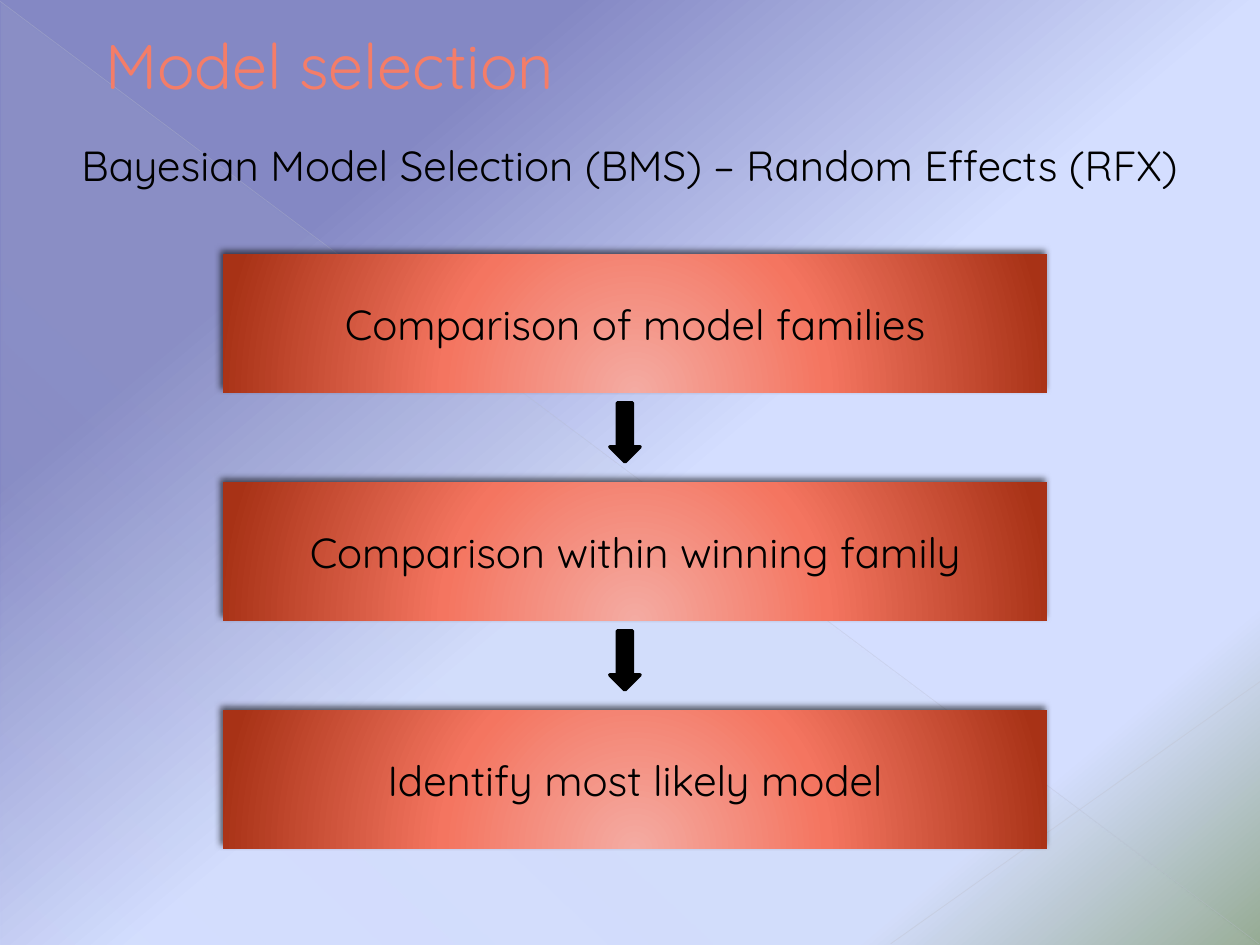
from lxml import etree
from pptx import Presentation
from pptx import util as u
from pptx.dml.color import RGBColor
from pptx.enum import shapes, text
from pptx.oxml.ns import qn

BLACK = RGBColor(0x00, 0x00, 0x00)
CORAL = RGBColor(0xF4, 0x7D, 0x68)
ROSE = RGBColor(0xF4, 0xAB, 0xA2)
RED = RGBColor(0xF4, 0x75, 0x60)
RUST = RGBColor(0xA8, 0x32, 0x16)
BLUE = RGBColor(0x84, 0x88, 0xC4)
SKY = RGBColor(0xD4, 0xDE, 0xFF)
SAGE = RGBColor(0x96, 0xAB, 0x94)
MIST = RGBColor(0xC5, 0xD1, 0xD7)
HAZE = RGBColor(0xBA, 0xBE, 0xCD)
PALE = RGBColor(0xC2, 0xC5, 0xD2)


def add(parent, tag, **attrs):
    return etree.SubElement(parent, qn("a:" + tag), {k: str(v) for k, v in attrs.items()})


def tint(parent, color, alpha):
    add(add(parent, "srgbClr", val=color), "alpha", val=alpha * 1000)


class Deck:
    font = "Quicksand"
    size = 24

    def __init__(self, width, height):
        self.prs = Presentation()
        self.prs.slide_width = u.Pt(width)
        self.prs.slide_height = u.Pt(height)
        self.slide = self.prs.slides.add_slide(self.prs.slide_layouts[6])

    def blend(self, owner, fill, stops, angle=None, focus=None):
        fill.gradient()
        grad = owner.find(".//" + qn("a:gradFill"))
        for child in list(grad):
            grad.remove(child)
        group = add(grad, "gsLst")
        for place, color, alpha in stops:
            tint(add(group, "gs", pos=place * 1000), color, alpha)
        if focus:
            ring = add(grad, "path", path="circle")
            add(ring, "fillToRect", **{k: v * 1000 for k, v in focus.items()})
        else:
            add(grad, "lin", ang=angle * 60000, scaled=0)

    def back(self, stops, angle):
        self.blend(self.slide.element, self.slide.background.fill, stops, angle)

    def shape(self, kind, left, top, width, height):
        item = self.slide.shapes.add_shape(kind, *map(u.Pt, (left, top, width, height)))
        item.shadow.inherit = False
        item.line.fill.background()
        return item

    def wedge(self, left, top, width, height, stops, angle):
        item = self.shape(shapes.MSO_SHAPE.RIGHT_TRIANGLE, left, top, width, height)
        self.blend(item.element, item.fill, stops, angle)

    def line(self, start, end, color, width, alpha):
        item = self.slide.shapes.add_connector(
            shapes.MSO_CONNECTOR.STRAIGHT, *map(u.Pt, (*start, *end)))
        item.line.color.rgb = color
        item.line.width = u.Pt(width)
        props = item.element.spPr
        add(props.find(".//" + qn("a:srgbClr")), "alpha", val=alpha * 1000)
        add(props, "effectLst")

    def words(self, item, copy, color=BLACK, size=None, align=text.PP_ALIGN.CENTER):
        frame = item.text_frame
        frame.word_wrap = True
        frame.vertical_anchor = text.MSO_ANCHOR.MIDDLE
        para = frame.paragraphs[0]
        para.text = copy
        para.alignment = align
        para.font.name = self.font
        para.font.size = u.Pt(size or self.size)
        para.font.color.rgb = color

    def label(self, left, top, width, height, copy, **style):
        item = self.slide.shapes.add_textbox(*map(u.Pt, (left, top, width, height)))
        self.words(item, copy, **style)

    def step(self, left, top, width, height, copy):
        item = self.shape(shapes.MSO_SHAPE.RECTANGLE, left, top, width, height)
        self.blend(item.element, item.fill,
                   [(0, ROSE, 100), (46, RED, 100), (100, RUST, 100)],
                   focus={"l": 50, "t": 155, "r": 50, "b": -55})
        shade = add(item.element.spPr.find(qn("a:effectLst")), "outerShdw",
                    blurRad=u.Pt(4), dist=u.Pt(3), dir=245 * 60000, rotWithShape=0)
        tint(shade, BLACK, 60)
        self.words(item, copy)

    def arrow(self, left, top, width, height):
        item = self.shape(shapes.MSO_SHAPE.DOWN_ARROW, left, top, width, height)
        item.fill.solid()
        item.fill.fore_color.rgb = BLACK
        item.line.color.rgb = BLACK
        item.line.width = u.Pt(2)
        add(item.element.spPr.find(qn("a:ln")), "round")


def main():
    deck = Deck(720, 540)
    deck.back([(24, BLUE, 100), (53, SKY, 100), (83, SKY, 100), (100, SAGE, 100)], 50)
    deck.wedge(0.7, 1.4, 718.6, 538.6, [(0, MIST, 10), (70, MIST, 8), (100, MIST, 1)], 133)
    deck.line((0, 0.7), (719.3, 539.3), HAZE, 0.39, 35)
    deck.line((720, 389.5), (509, 539.3), PALE, 0.47, 45)

    deck.label(53, 8, 600, 57, "Model selection",
               color=CORAL, size=36, align=text.PP_ALIGN.LEFT)
    deck.label(25.2, 71.3, 669, 45.4,
               "Bayesian Model Selection (BMS) – Random Effects (RFX)")

    steps = ["Comparison of model families", "Comparison within winning family",
             "Identify most likely model"]
    for i, step in enumerate(steps):
        top = 145.2 + i * 130.3
        deck.step(127.4, top, 471, 79.2, step)
        if i < len(steps) - 1:
            deck.arrow(348.5, top + 85, 17.3, 33.8)

    deck.prs.save("out.pptx")


if __name__ == "__main__":
    main()
